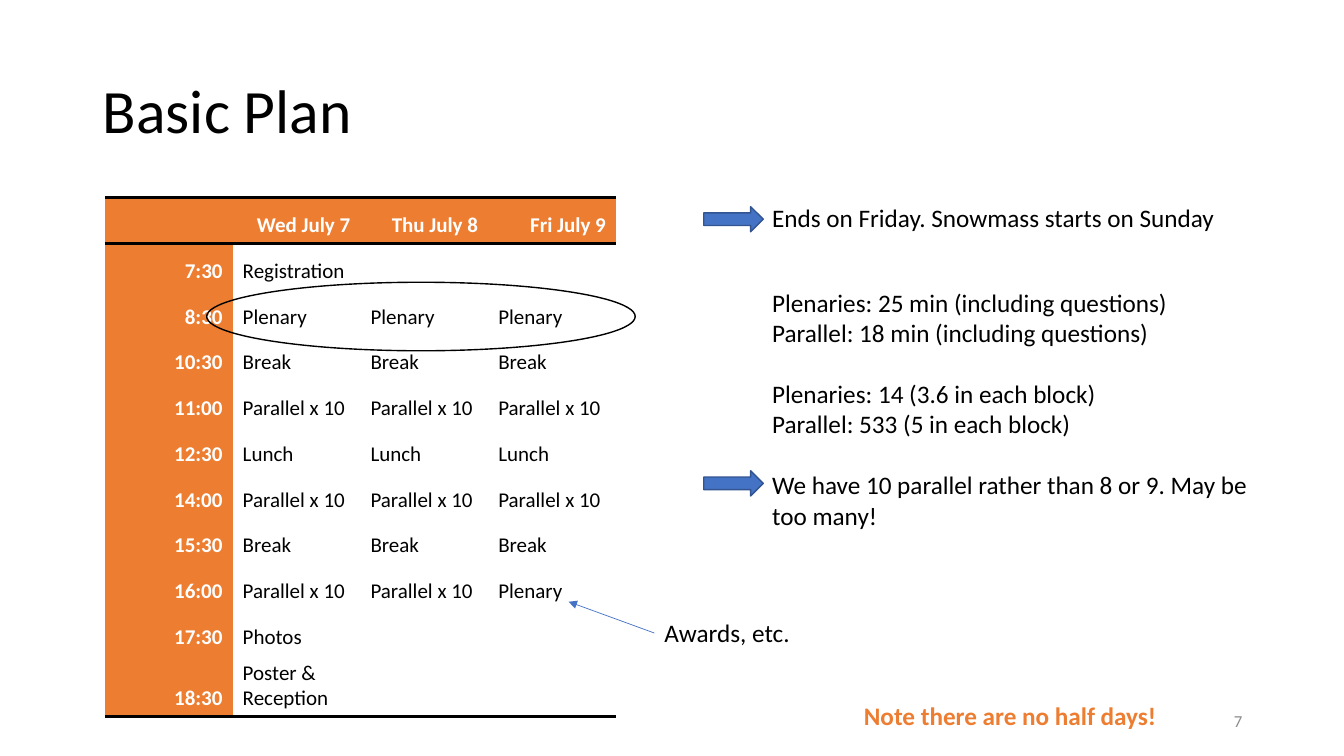
"""Build the Basic Plan slide: a three-day timetable with remarks."""
import pptx
import pptx.dml.color
import pptx.enum.dml
import pptx.enum.shapes
import pptx.enum.text
import pptx.oxml
import pptx.oxml.ns
import pptx.util

ALIGN = pptx.enum.text.PP_ALIGN
ANCHOR = pptx.enum.text.MSO_ANCHOR
SHAPE = pptx.enum.shapes.MSO_SHAPE
FONT = "Calibri"
BLACK, WHITE, ORANGE, BLUE, NAVY, GREY = (
    "000000", "FFFFFF", "ED7D31", "4472C4", "325491", "8C8C8C")
NO_GRID_STYLE = "{2D5ABB26-0587-4C30-8999-92F81FD0307C}"

TITLE = "Basic Plan"
PARALLEL = "Parallel x 10"
TIMETABLE = [
    ("", "Wed July 7", "Thu July 8", "Fri July 9"),
    ("7:30", "Registration", "", ""),
    ("8:30", "Plenary", "Plenary", "Plenary"),
    ("10:30", "Break", "Break", "Break"),
    ("11:00", PARALLEL, PARALLEL, PARALLEL),
    ("12:30", "Lunch", "Lunch", "Lunch"),
    ("14:00", PARALLEL, PARALLEL, PARALLEL),
    ("15:30", "Break", "Break", "Break"),
    ("16:00", PARALLEL, PARALLEL, "Plenary"),
    ("17:30", "Photos", "", ""),
    ("18:30", "Poster & Reception", "", ""),
]
ENDING = ["Ends on Friday. Snowmass starts on Sunday"]
REMARK_GROUPS = [
    ["Plenaries: 25 min (including questions)",
     "Parallel: 18 min (including questions)"],
    ["Plenaries: 14 (3.6 in each block)",
     "Parallel: 533 (5 in each block)"],
    ["We have 10 parallel rather than 8 or 9. May be too many!"],
]
AWARDS = ["Awards, etc."]
NOTE = ["Note there are no half days!"]
PAGE_NUMBER = ["7"]

WIDTH, HEIGHT = 13.33, 7.5
TABLE_LEFT, TABLE_TOP, TABLE_WIDTH, TABLE_HEIGHT = 1.04, 1.96, 5.07, 5.14
LAST_ROW = 0.6
ROW = (TABLE_HEIGHT - LAST_ROW) / (len(TIMETABLE) - 1)
REMARK_LEFT, LINE_BOX = 7.56, 0.4
ARROW_WIDTH, ARROW_HEIGHT = 0.59, 0.25
ARROW_TOPS = [2.05, 4.67]


def color(value):
    return pptx.dml.color.RGBColor.from_string(value)


def inches(*lengths):
    return [pptx.util.Inches(length) for length in lengths]


def style(para, size, ink=BLACK, bold=False, align=ALIGN.LEFT):
    para.alignment = align
    para.font.name = FONT
    para.font.size = pptx.util.Pt(size)
    para.font.bold = bold
    para.font.color.rgb = color(ink)


def add_text(page, area, groups, wrap=False, size=18, ink=BLACK, bold=False,
             align=ALIGN.LEFT, anchor=ANCHOR.TOP):
    box = page.shapes.add_textbox(*inches(*area))
    frame = box.text_frame
    frame.word_wrap = wrap
    frame.vertical_anchor = anchor
    frame.text = "\n".join(line for group in groups for line in group)
    for para in frame.paragraphs:
        style(para, size, ink, bold, align)
    first = 0
    for group in groups[:-1]:
        first += len(group)
        frame.paragraphs[first].space_before = pptx.util.Pt(size * 1.22)
    return box


def add_outline(page, preset, area, fill, line):
    shape = page.shapes.add_shape(preset, *inches(*area))
    shape.shadow.inherit = False
    if fill:
        shape.fill.solid()
        shape.fill.fore_color.rgb = color(fill)
    else:
        shape.fill.background()
    shape.line.color.rgb = color(line)
    shape.line.width = pptx.util.Pt(1)


def add_border(cell, side):
    border = pptx.oxml.parse_xml(
        f'<a:ln{side} {pptx.oxml.ns.nsdecls("a")} w="25400"><a:solidFill>'
        f'<a:srgbClr val="{BLACK}"/></a:solidFill></a:ln{side}>')
    cell._tc.get_or_add_tcPr().append(border)


def add_timetable(page):
    area = TABLE_LEFT, TABLE_TOP, TABLE_WIDTH, TABLE_HEIGHT
    last = len(TIMETABLE) - 1
    frame = page.shapes.add_table(len(TIMETABLE), len(TIMETABLE[0]), *inches(*area))
    table = frame.table
    table._tbl.tblPr.find(pptx.oxml.ns.qn("a:tableStyleId")).text = NO_GRID_STYLE
    table.horz_banding = False
    table.first_col = True
    for r, entries in enumerate(TIMETABLE):
        table.rows[r].height = pptx.util.Inches(LAST_ROW if r == last else ROW)
        for c, entry in enumerate(entries):
            cell = table.cell(r, c)
            heading = r == 0 or c == 0
            if r == 0:
                add_border(cell, "T")
            if r in (0, last):
                add_border(cell, "B")
            cell.fill.solid()
            cell.fill.fore_color.rgb = color(ORANGE if heading else WHITE)
            cell.vertical_anchor = ANCHOR.BOTTOM
            cell.text = entry
            style(cell.text_frame.paragraphs[0], 15, WHITE if heading else BLACK,
                  heading, ALIGN.RIGHT if heading else ALIGN.LEFT)


def add_pointer(page, box, target):
    pointer = page.shapes.add_connector(
        pptx.enum.shapes.MSO_CONNECTOR.STRAIGHT, *inches(6.49, 6.28, *target))
    pointer.begin_connect(box, 1)
    pointer.line.color.rgb = color(BLUE)
    pointer.line.width = pptx.util.Pt(0.5)
    namespace = pptx.oxml.ns.nsdecls("a")
    pointer.line._get_or_add_ln().append(
        pptx.oxml.parse_xml(f'<a:tailEnd {namespace} type="triangle"/>'))
    pointer._element.spPr.append(pptx.oxml.parse_xml(f"<a:effectLst {namespace}/>"))


def main():
    deck = pptx.Presentation()
    deck.slide_width, deck.slide_height = inches(WIDTH, HEIGHT)
    page = deck.slides.add_slide(deck.slide_layouts[5])

    title = page.shapes.title
    title.left, title.top, title.width, title.height = inches(0.92, 0.4, 11.5, 1.45)
    title.text_frame.text = TITLE
    title.text_frame.vertical_anchor = ANCHOR.MIDDLE
    heading = title.text_frame.paragraphs[0]
    style(heading, 44)
    heading.line_spacing = 0.9

    add_timetable(page)
    add_text(page, (REMARK_LEFT, TABLE_TOP, 4.63, LINE_BOX), [ENDING])
    add_text(page, (REMARK_LEFT, 2.8, 5.16, 2.52), REMARK_GROUPS, wrap=True)
    for top in ARROW_TOPS:
        area = REMARK_LEFT + 0.01 - ARROW_WIDTH, top, ARROW_WIDTH, ARROW_HEIGHT
        add_outline(page, SHAPE.RIGHT_ARROW, area, BLUE, NAVY)
    awards = add_text(page, (6.49, 6.08, 1.46, LINE_BOX), [AWARDS])
    add_pointer(page, awards, (5.64, 5.97))
    add_outline(page, SHAPE.OVAL, (2.05, 2.8, 4.25, 0.68), None, BLACK)
    add_text(page, (8.47, 6.9, 3.13, LINE_BOX), [NOTE], ink=ORANGE, bold=True)
    add_text(page, (9.42, 6.95, 3, LINE_BOX), [PAGE_NUMBER], wrap=True, size=12,
             ink=GREY, align=ALIGN.RIGHT, anchor=ANCHOR.MIDDLE)
    deck.save("out.pptx")


if __name__ == "__main__":
    main()
